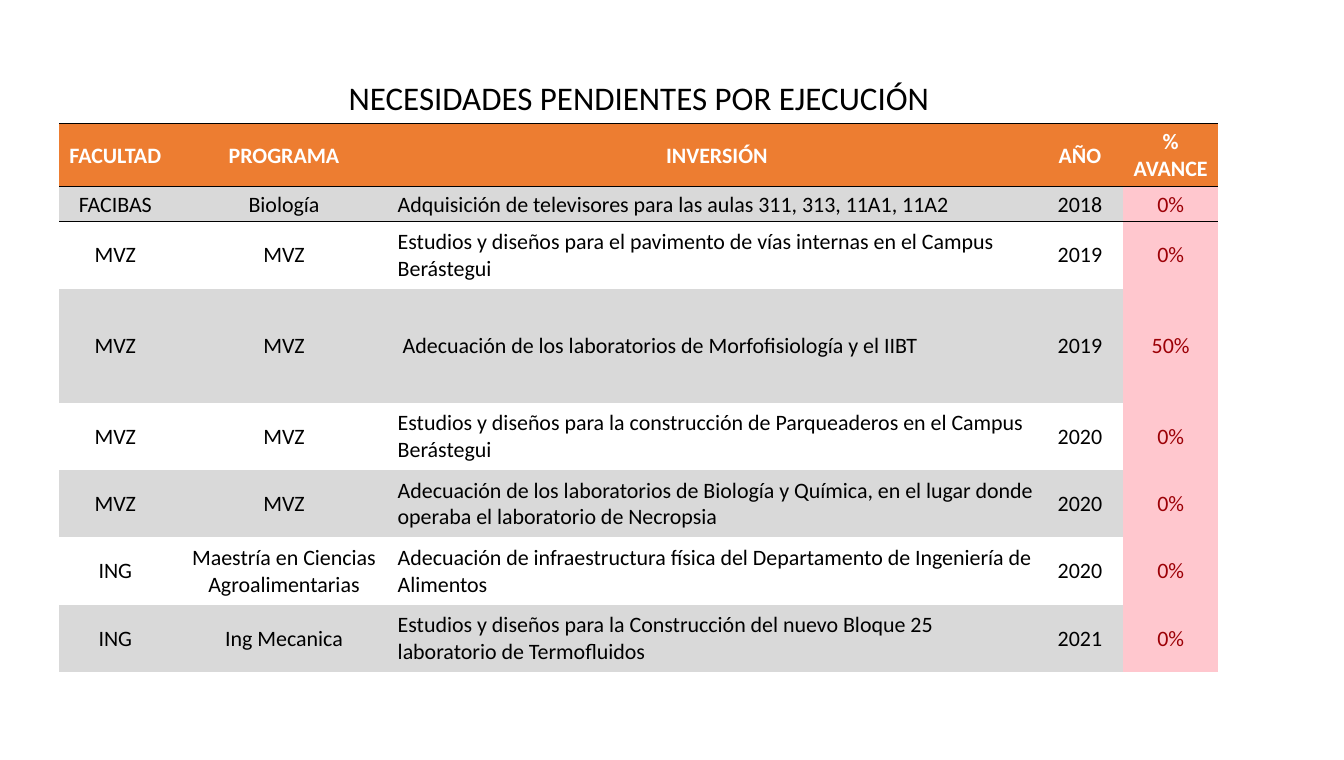
"""Build the slide listing the works still pending, by faculty and year."""
from lxml import etree
from pptx import Presentation
from pptx.dml.color import RGBColor
from pptx.enum import text as t
from pptx.oxml import ns
from pptx.util import Pt


def put(frame, words, size, color, bold=False, align=t.PP_ALIGN.CENTER):
    para = frame.paragraphs[0]
    para.alignment = align
    run = para.add_run()
    run.text = words
    run.font.name = "Calibri"
    run.font.size = Pt(size)
    run.font.bold = bold
    run.font.color.rgb = RGBColor.from_string(color)


def rule(cell, side):
    props = cell._tc.get_or_add_tcPr()
    line = etree.SubElement(props, ns.qn("a:" + side), w=str(Pt(1)))
    fill = etree.SubElement(line, ns.qn("a:solidFill"))
    etree.SubElement(fill, ns.qn("a:srgbClr"), val="000000")


heads = ["FACULTAD", "PROGRAMA", "INVERSIÓN", "AÑO", "% AVANCE"]
works = [
    ["FACIBAS", "Biología",
     "Adquisición de televisores para las aulas 311, 313, 11A1, 11A2", "2018", "0%"],
    ["MVZ", "MVZ",
     "Estudios y diseños para el pavimento de vías internas en el Campus Berástegui",
     "2019", "0%"],
    ["MVZ", "MVZ",
     " Adecuación de los laboratorios de Morfofisiología y el IIBT", "2019", "50%"],
    ["MVZ", "MVZ",
     "Estudios y diseños para la construcción de Parqueaderos en el Campus Berástegui",
     "2020", "0%"],
    ["MVZ", "MVZ",
     "Adecuación de los laboratorios de Biología y Química, en el lugar donde "
     "operaba el laboratorio de Necropsia", "2020", "0%"],
    ["ING", "Maestría en Ciencias Agroalimentarias",
     "Adecuación de infraestructura física del Departamento de Ingeniería de Alimentos",
     "2020", "0%"],
    ["ING", "Ing Mecanica",
     "Estudios y diseños para la Construcción del nuevo Bloque 25 "
     "laboratorio de Termofluidos", "2021", "0%"],
]
rows = [heads] + works
wides = [81.5, 164.2, 466, 62.8, 69.3]
highs = [46, 25, 49, 83, 49, 49, 49, 49]
left, wide = 43.2, sum(wides)

deck = Presentation()
deck.slide_width, deck.slide_height = Pt(978.5), Pt(553)
slide = deck.slides.add_slide(deck.slide_layouts[6])

title = slide.shapes.add_textbox(Pt(left), Pt(17.3), Pt(wide), Pt(106.6)).text_frame
title.word_wrap = True
title.vertical_anchor = t.MSO_ANCHOR.MIDDLE
put(title, "NECESIDADES PENDIENTES POR EJECUCIÓN", 24, "000000")

frame = slide.shapes.add_table(
    len(rows), len(wides), Pt(left), Pt(90), Pt(wide), Pt(sum(highs)))
table = frame.table
table.horz_banding = False
style = table._tbl.tblPr.find(ns.qn("a:tableStyleId"))
style.text = "{2D5ABB26-0587-4C30-8999-92F81FD0307C}"
for col, size in zip(table.columns, wides):
    col.width = Pt(size)

for r, row in enumerate(rows):
    table.rows[r].height = Pt(highs[r])
    for c, words in enumerate(row):
        cell = table.cell(r, c)
        cell.margin_left = cell.margin_right = cell.margin_top = Pt(0.7)
        cell.margin_bottom = 0
        cell.vertical_anchor = t.MSO_ANCHOR.MIDDLE
        if r < 2:
            rule(cell, "lnT")
        if r == 0:
            rule(cell, "lnB")
            back, ink = "ED7D31", "FFFFFF"
        elif c == 4:
            back, ink = "FFC7CE", "9C0006"
        else:
            back, ink = "D9D9D9" if r % 2 else None, "000000"
        if back:
            cell.fill.solid()
            cell.fill.fore_color.rgb = RGBColor.from_string(back)
        else:
            cell.fill.background()
        align = t.PP_ALIGN.LEFT if r and c == 2 else t.PP_ALIGN.CENTER
        put(cell.text_frame, words, 16, ink, r == 0, align)

deck.save("out.pptx")
